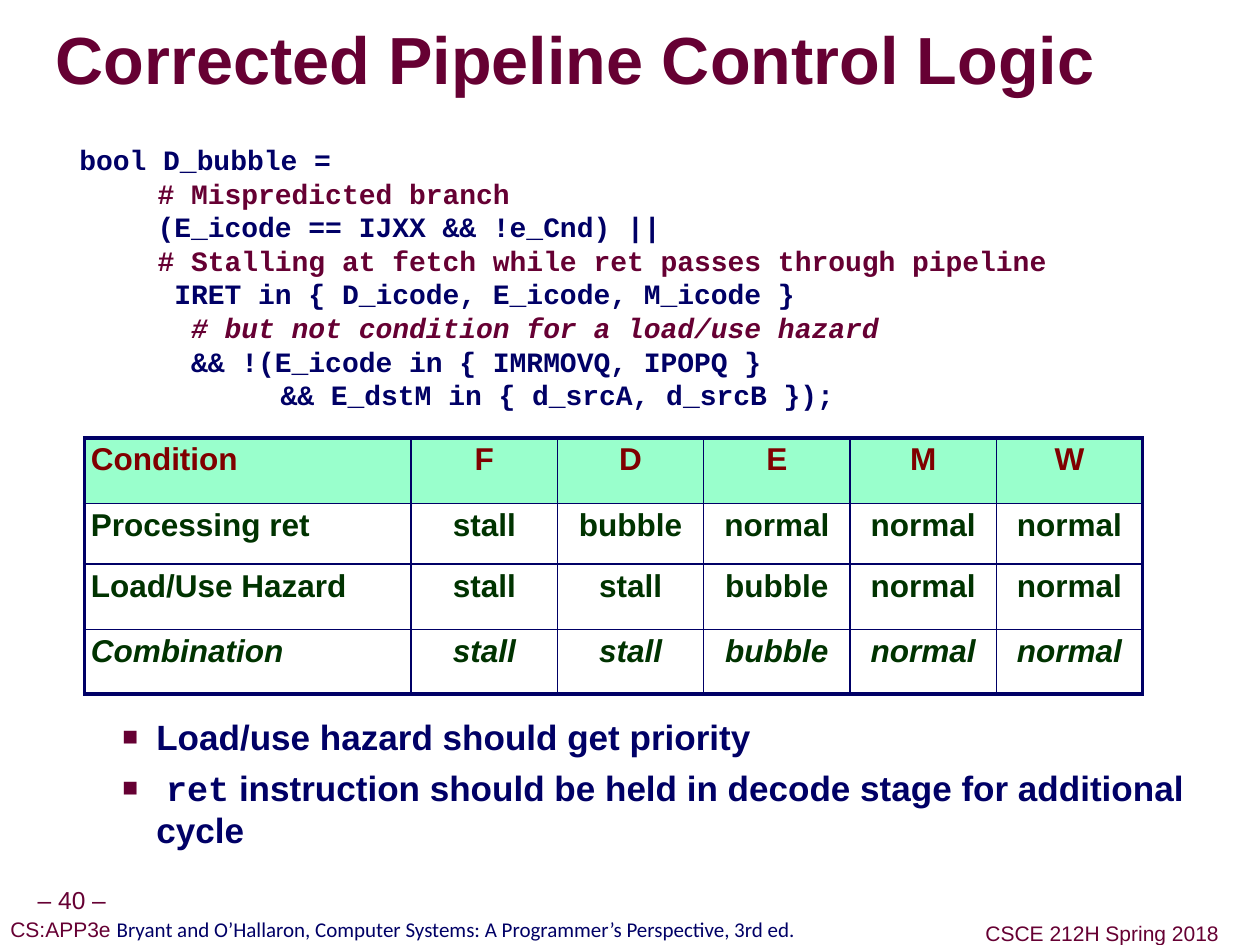
import pptx
import pptx.util
import pptx.dml.color
import pptx.enum.text
import pptx.oxml.ns
from lxml import etree

Inches = pptx.util.Inches
Pt = pptx.util.Pt
ALIGN = pptx.enum.text.PP_ALIGN
ANCHOR = pptx.enum.text.MSO_ANCHOR
WINE, NAVY, GREEN, RED, MINT = "660033", "000066", "003300", "800000", "99FFCC"
SANS, MONO = "Arial", "Courier New"
SIDES = ("left", "top", "right", "bottom")

FOOTS = [
    ((0.24, 6.99, 0.66, 0.31), [("– 40 –", WINE, SANS)], 14),
    ((0, 7.24, 6.39, 0.28), [
        ("CS:APP3e ", WINE, SANS),
        ("Bryant and O’Hallaron, Computer Systems: A Programmer’s Perspective, 3rd ed.",
         NAVY, "Calibri")], 12),
    ((7.76, 7.27, 1.96, 0.28), [("CSCE 212H Spring 2018", WINE, SANS)], 12),
]
CODE = [
    ("bool D_bubble =", NAVY, False),
    ("\t# Mispredicted branch", WINE, False),
    ("\t(E_icode == IJXX && !e_Cnd) ||", NAVY, False),
    ("\t# Stalling at fetch while ret passes through pipeline", WINE, False),
    ("\t IRET in { D_icode, E_icode, M_icode }", NAVY, False),
    ("\t  # but not condition for a load/use hazard", WINE, True),
    ("\t  && !(E_icode in { IMRMOVQ, IPOPQ }", NAVY, False),
    ("            && E_dstM in { d_srcA, d_srcB });", NAVY, False),
]
ROWS = [
    ("Condition", "F", "D", "E", "M", "W"),
    ("Processing ret", "stall", "bubble", "normal", "normal", "normal"),
    ("Load/Use Hazard", "stall", "stall", "bubble", "normal", "normal"),
    ("Combination", "stall", "stall", "bubble", "normal", "normal"),
]
WIDTHS = [2.59] + [1.16] * 5
HEIGHTS = [0.52, 0.48, 0.52, 0.51]
POINTS = [
    [("Load/use hazard should get priority", SANS)],
    [(" ", SANS), ("ret", MONO),
     (" instruction should be held in decode stage for additional cycle", SANS)],
]


def color(code):
    """Turn a hex string into a colour."""
    return pptx.dml.color.RGBColor.from_string(code)


def apply(item, form):
    """Set each attribute of item from a dict."""
    for key, value in form.items():
        setattr(item, key, value)


def node(parent, tag, **attrs):
    """Append a drawing element to parent."""
    return etree.SubElement(parent, pptx.oxml.ns.qn("a:" + tag), attrs)


def write(para, text, code, **form):
    """Add a run of text in one format."""
    run = para.add_run()
    run.text = text
    apply(run.font, form)
    run.font.color.rgb = color(code)
    return run


def box(slide, place, pad=0.05, **form):
    """Add a text box and return its frame."""
    frame = slide.shapes.add_textbox(*map(Inches, place)).text_frame
    apply(frame, {"margin_" + side: Inches(pad) for side in SIDES})
    apply(frame, {"word_wrap": True, **form})
    return frame


def lines(frame, items):
    """Yield a paragraph with each item."""
    for pos, item in enumerate(items):
        yield frame.add_paragraph() if pos else frame.paragraphs[0], item


def title(slide, text):
    """Add the title with its text shadow."""
    frame = box(slide, (0.44, 0.08, 9.52, 0.85), 0, vertical_anchor=ANCHOR.MIDDLE)
    para = frame.paragraphs[0]
    para.line_spacing = 0.87
    run = write(para, text, WINE, name=SANS, size=Pt(38), bold=True)
    props = run._r.get_or_add_rPr()
    effect = node(props, "effectLst")
    shade = node(effect, "outerShdw", dist="38100", dir="2700000")
    node(shade, "srgbClr", val="969696")
    props.find(pptx.oxml.ns.qn("a:solidFill")).addnext(effect)


def foot(slide, place, parts, size):
    """Add one centred footer line."""
    frame = box(slide, place, word_wrap=False, vertical_anchor=ANCHOR.MIDDLE)
    para = frame.paragraphs[0]
    apply(para, {"alignment": ALIGN.CENTER, "line_spacing": 0.9})
    for text, code, face in parts:
        write(para, text, code, name=face, size=Pt(size))


def listing(slide):
    """Add the code with its tab stop."""
    frame = box(slide, (0.58, 1.08, 9.24, 2.51))
    for para, (text, code, slant) in lines(frame, CODE):
        tabs = node(para._p.get_or_add_pPr(), "tabLst")
        node(tabs, "tab", pos=str(Inches(0.62)), algn="l")
        write(para, text, code, name=MONO, size=Pt(16), bold=True, italic=slant)


def border(cell, edges):
    """Draw the four sides, thick at the table edge."""
    for side, edge in edges.items():
        width = Pt(2.25 if edge else 1)
        line = node(cell._tc.get_or_add_tcPr(), "ln" + side, w=str(width))
        node(node(line, "solidFill"), "srgbClr", val=NAVY)


def fill(cell, text, row, col):
    """Fill one table cell."""
    last = len(ROWS) - 1
    border(cell, {"L": col == 0, "R": col == len(WIDTHS) - 1,
                  "T": row == 0, "B": row == last})
    if row == 0:
        cell.fill.solid()
        cell.fill.fore_color.rgb = color(MINT)
    else:
        cell.fill.background()
    apply(cell, {"margin_" + side: Inches(0.05) for side in SIDES})
    para = cell.text_frame.paragraphs[0]
    apply(para, {"line_spacing": 0.95, "alignment": ALIGN.CENTER if col else ALIGN.LEFT})
    write(para, text, GREEN if row else RED, name=SANS, size=Pt(18),
          bold=True, italic=row == last)


def grid(slide):
    """Add the table of conditions."""
    place = map(Inches, (0.67, 3.47, sum(WIDTHS), sum(HEIGHTS)))
    table = slide.shapes.add_table(len(ROWS), len(WIDTHS), *place).table
    apply(table, {"first_row": False, "horz_banding": False})
    for column, width in zip(table.columns, WIDTHS):
        column.width = Inches(width)
    for row, height in enumerate(HEIGHTS):
        table.rows[row].height = Inches(height)
        for col, text in enumerate(ROWS[row]):
            fill(table.cell(row, col), text, row, col)


def points(slide):
    """Add the bulleted remarks."""
    frame = box(slide, (0.38, 5.62, 9.08, 1.58))
    for para, parts in lines(frame, POINTS):
        props = para._p.get_or_add_pPr()
        para.space_before = Pt(0 if parts is POINTS[0] else 5)
        props.set("marL", str(Inches(0.81)))
        props.set("indent", str(Inches(-0.27)))
        node(node(props, "buClr"), "srgbClr", val=WINE)
        node(props, "buSzPct", val="75000")
        node(props, "buFont", typeface=SANS)
        node(props, "buChar", char="■")
        for text, face in parts:
            write(para, text, NAVY, name=face, size=Pt(20), bold=True)


def main():
    """Build and save the slide."""
    deck = pptx.Presentation()
    apply(deck, {"slide_width": Inches(9.99), "slide_height": Inches(7.49)})
    slide = deck.slides.add_slide(deck.slide_layouts[6])
    for item in FOOTS:
        foot(slide, *item)
    title(slide, "Corrected Pipeline Control Logic")
    points(slide)
    grid(slide)
    listing(slide)
    deck.save("out.pptx")


if __name__ == "__main__":
    main()
